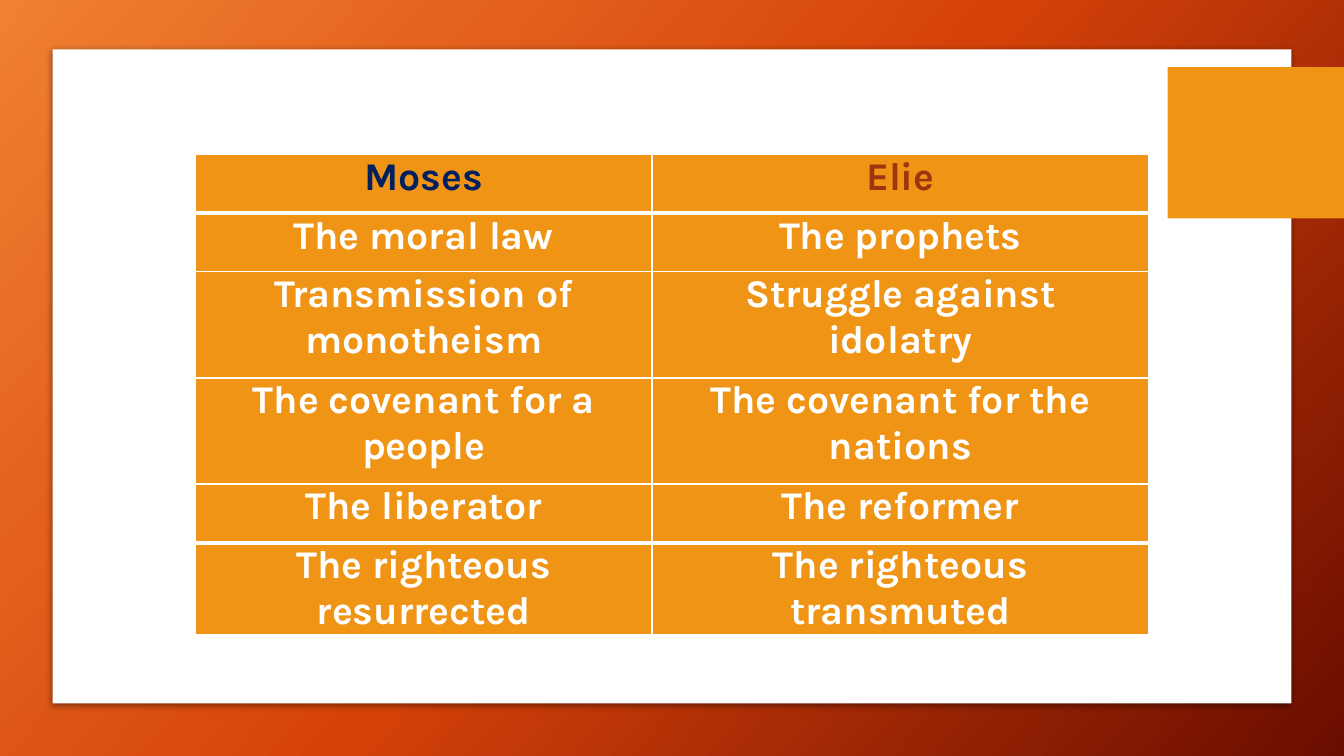
"""Build a slide comparing Moses and Elie in a two-column table."""
from copy import deepcopy

from lxml import etree
from pptx import Presentation
from pptx.dml.color import RGBColor
from pptx.enum.shapes import MSO_SHAPE
from pptx.enum.text import PP_ALIGN
from pptx.oxml import parse_xml
from pptx.oxml.ns import nsdecls, qn
from pptx.util import Pt

PX = 9525
RECTANGLE = MSO_SHAPE.RECTANGLE
CENTER = PP_ALIGN.CENTER
WHITE = RGBColor(0xFF, 0xFF, 0xFF)
AMBER = RGBColor(0xF0, 0x94, 0x15)
NAVY = RGBColor(0x00, 0x20, 0x60)
RUST = RGBColor(0x9D, 0x36, 0x0E)
BACKDROP = [
    (0, RGBColor(0xF1, 0x80, 0x31)),
    (0.5, RGBColor(0xD5, 0x42, 0x09)),
    (1, RGBColor(0x6A, 0x0D, 0x00)),
]

COLUMN_WIDTHS = [435, 473]
ROW_HEIGHTS = [56, 56, 101, 101, 56, 56]
HEADING_COLORS = [NAVY, RUST]
COMPARISON = [
    ("Moses", "Elie"),
    ("The moral law", "The prophets"),
    ("Transmission of monotheism", "Struggle against idolatry"),
    ("The covenant for a people", "The covenant for the nations"),
    ("The liberator", "The reformer"),
    ("The righteous resurrected", "The righteous transmuted"),
]
CELL_MARGINS = {"margin_left": 19 * PX, "margin_right": 19 * PX,
                "margin_top": 0, "margin_bottom": 0}
CELL_FONT = {"name": "Karla", "size": Pt(28), "bold": True}


def set_attributes(target, values):
    """Apply a dict of format values to an object."""
    for name, value in values.items():
        setattr(target, name, value)


def paint_background(slide):
    """Fill the slide with a diagonal three-stop gradient."""
    fill = slide.background.fill
    fill.gradient()
    fill.gradient_angle = 318
    stop_list = slide.element.find(".//" + qn("a:gsLst"))
    stop_list.append(deepcopy(stop_list[-1]))
    for stop, (position, color) in zip(fill.gradient_stops, BACKDROP):
        stop.position = position
        stop.color.rgb = color


def add_block(slide, left, top, width, height, color):
    """Add a plain filled rectangle without outline."""
    block = slide.shapes.add_shape(
        RECTANGLE, left * PX, top * PX, width * PX, height * PX)
    block.shadow.inherit = False
    block.fill.solid()
    block.fill.fore_color.rgb = color
    block.line.fill.background()
    return block


def add_shadow(block):
    """Cast a soft shadow below a block."""
    effects = block.element.spPr.find(qn("a:effectLst"))
    effects.append(parse_xml(
        f'<a:outerShdw {nsdecls("a")} blurRad="{Pt(5)}" dist="{Pt(1.4)}" '
        'dir="5400000" algn="t" rotWithShape="0"><a:srgbClr val="000000">'
        '<a:alpha val="43000"/></a:srgbClr></a:outerShdw>'))


def set_borders(cell, widths):
    """Draw white borders from a dict of side letters and point widths."""
    properties = cell._tc.get_or_add_tcPr()
    for side, width in widths.items():
        line = etree.SubElement(
            properties, qn(f"a:ln{side}"), w=str(Pt(width)))
        solid = etree.SubElement(line, qn("a:solidFill"))
        etree.SubElement(solid, qn("a:srgbClr"), val=str(WHITE))


def fill_cell(cell, text, color, borders):
    """Write and format one table cell."""
    set_borders(cell, borders)
    set_attributes(cell, CELL_MARGINS)
    cell.fill.solid()
    cell.fill.fore_color.rgb = AMBER
    paragraph = cell.text_frame.paragraphs[0]
    set_attributes(paragraph, {"alignment": CENTER, "space_after": Pt(4)})
    run = paragraph.add_run()
    run.text = text
    set_attributes(run.font, CELL_FONT)
    run.font.color.rgb = color


def add_comparison(slide, left, top):
    """Add the table with heavy rules below the first and above the last row."""
    table = slide.shapes.add_table(
        len(ROW_HEIGHTS), len(COLUMN_WIDTHS), left * PX, top * PX,
        sum(COLUMN_WIDTHS) * PX, sum(ROW_HEIGHTS) * PX).table
    set_attributes(table, {"first_row": False, "horz_banding": False})
    for column, width in zip(table.columns, COLUMN_WIDTHS):
        column.width = width * PX
    last = len(COMPARISON) - 1
    heavy_edges = (1, last)
    for index, (texts, height) in enumerate(zip(COMPARISON, ROW_HEIGHTS)):
        row = table.rows[index]
        row.height = height * PX
        borders = {"L": 1, "R": 1,
                   "T": 3 if index in heavy_edges else 1,
                   "B": 3 if index + 1 in heavy_edges else 1}
        colors = HEADING_COLORS if index == 0 else [WHITE, WHITE]
        for cell, text, color in zip(row.cells, texts, colors):
            fill_cell(cell, text, color, borders)


def main():
    """Assemble and save the slide."""
    deck = Presentation()
    set_attributes(deck, {"slide_width": 1280 * PX, "slide_height": 720 * PX})
    slide = deck.slides.add_slide(deck.slide_layouts[6])
    paint_background(slide)
    panel = add_block(slide, 50, 47, 1180, 623, WHITE)
    add_shadow(panel)
    add_block(slide, 1112, 64, 168, 144, AMBER)
    add_comparison(slide, 186, 147)
    deck.save("out.pptx")


if __name__ == "__main__":
    main()
